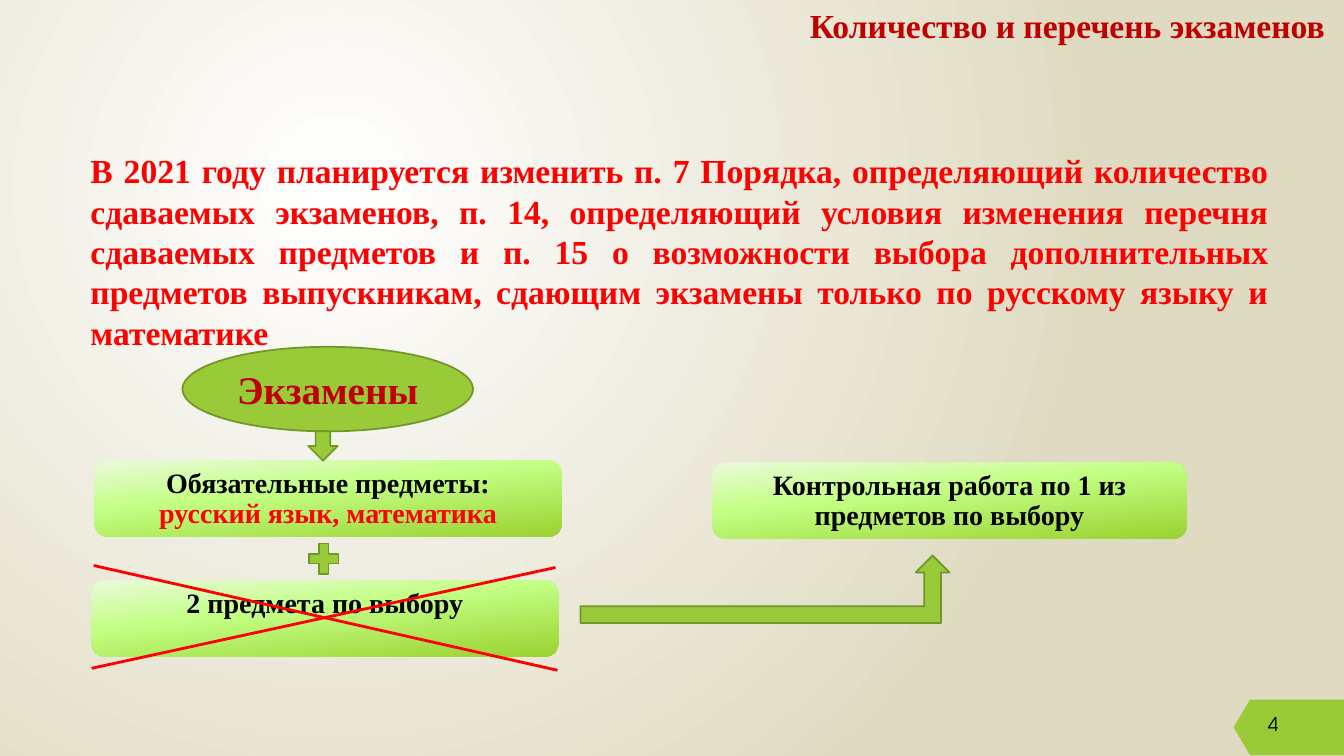
from copy import deepcopy

from lxml import etree
from pptx import Presentation
from pptx.dml.color import RGBColor
from pptx.enum import shapes, text
from pptx.oxml import ns
from pptx.util import Cm, Pt

GREEN = RGBColor(0x99, 0xCB, 0x38)
DARK_GREEN = RGBColor(0x71, 0x96, 0x29)
RED = RGBColor(0xFF, 0, 0)
DARK_RED = RGBColor(0xC0, 0, 0)
BLACK = RGBColor(0, 0, 0)
BACKDROP_STOPS = [(0, RGBColor(0xFF, 0xFF, 0xFF)), (1, RGBColor(0xDF, 0xDB, 0xC2))]
CARD_STOPS = [
    (0, RGBColor(0xEA, 0xFA, 0xDA)),
    (0.4, RGBColor(0xC3, 0xFF, 0x84)),
    (1, RGBColor(0x9B, 0xD2, 0x31)),
]
SERIF = "Times New Roman"
SANS = "TeX Gyre Adventor"
LEFT, CENTER, JUSTIFY = text.PP_ALIGN.LEFT, text.PP_ALIGN.CENTER, text.PP_ALIGN.JUSTIFY
PRESET = shapes.MSO_SHAPE

PAGE_NUMBER = "4"
TITLE = "Количество и перечень экзаменов"
STATEMENT = (
    "В 2021 году планируется изменить п. 7 Порядка, определяющий количество "
    "сдаваемых экзаменов, п. 14, определяющий условия изменения перечня "
    "сдаваемых предметов и п. 15 о возможности выбора дополнительных предметов "
    "выпускникам, сдающим экзамены только по русскому языку и математике"
)
EXAMS = "Экзамены"
CARDS = [
    ((2.39, 11.61, 11.76, 1.91),
     [("Обязательные предметы:", BLACK), ("русский язык, математика", RED)]),
    ((2.31, 14.63, 11.76, 1.91), [("2 предмета по выбору", BLACK)]),
    ((17.96, 11.66, 11.94, 1.91),
     [("Контрольная работа по 1 из предметов по выбору", BLACK)]),
]
SIGNS = [
    (PRESET.DOWN_ARROW, (7.77, 10.87, 0.74, 0.74)),
    (PRESET.MATH_PLUS, (7.65, 13.56, 1.02, 1.04)),
    (PRESET.BENT_UP_ARROW, (14.63, 14, 9.3, 1.7)),
]
CROSS = [(2.36, 14.25, 14.05, 16.89), (2.31, 16.84, 14, 14.3)]
PAGE_TAG = [(31.09, 18.33), (31.5, 17.63), (33.87, 17.63), (33.87, 19.03), (31.5, 19.03)]


def lengths(values):
    return [Cm(value) for value in values]


def set_gradient(fill, stops):
    fill.gradient()
    stop_list = fill.gradient_stops[0]._gs.getparent()
    while len(stop_list) < len(stops):
        stop_list.append(deepcopy(stop_list[0]))
    for stop, (position, color) in zip(fill.gradient_stops, stops):
        stop.position = position
        stop.color.rgb = color
    return stop_list.getparent()


def write(shape, pieces, size, align, font=SERIF, bold=True, spacing=None):
    shape.text_frame.word_wrap = True
    paragraph = shape.text_frame.paragraphs[0]
    paragraph.text = "\v".join(words for words, color in pieces)
    paragraph.alignment = align
    paragraph.line_spacing = spacing
    for run, (words, color) in zip(paragraph.runs, pieces):
        run.font.name = font
        run.font.size = Pt(size)
        run.font.bold = bold
        run.font.color.rgb = color


def add_text(slide, place, words, size, color, align, **style):
    box = slide.shapes.add_textbox(*lengths(place))
    write(box, [(words, color)], size, align, **style)


def add_green(slide, preset, place):
    shape = slide.shapes.add_shape(preset, *lengths(place))
    shape.shadow.inherit = False
    shape.fill.solid()
    shape.fill.fore_color.rgb = GREEN
    shape.line.color.rgb = DARK_GREEN
    shape.line.width = Pt(1.25)
    return shape


def add_card(slide, place, pieces):
    card = slide.shapes.add_shape(PRESET.ROUNDED_RECTANGLE, *lengths(place))
    card.shadow.inherit = False
    card.line.fill.background()
    gradient = set_gradient(card.fill, CARD_STOPS)
    direction = gradient.find(ns.qn("a:lin"))
    direction.set("ang", str(84 * 60000))
    direction.set("scaled", "0")
    card.text_frame.vertical_anchor = text.MSO_ANCHOR.TOP
    write(card, pieces, 20, CENTER, spacing=0.9)


def add_stroke(slide, ends):
    stroke = slide.shapes.add_connector(shapes.MSO_CONNECTOR.STRAIGHT, *lengths(ends))
    stroke.line.color.rgb = RED
    stroke.line.width = Pt(2)
    etree.SubElement(stroke._element.spPr, ns.qn("a:effectLst"))


def paint_background(slide):
    gradient = set_gradient(slide.background.fill, BACKDROP_STOPS)
    gradient.remove(gradient.find(ns.qn("a:lin")))
    circle = etree.SubElement(gradient, ns.qn("a:path"), path="circle")
    etree.SubElement(circle, ns.qn("a:fillToRect"),
                     l="50000", t="50000", r="100000", b="100000")


def add_page_tag(slide):
    start, *corners = [lengths(point) for point in PAGE_TAG]
    builder = slide.shapes.build_freeform(*start)
    builder.add_line_segments(corners, close=True)
    tag = builder.convert_to_shape()
    tag.shadow.inherit = False
    tag.fill.solid()
    tag.fill.fore_color.rgb = GREEN
    tag.line.fill.background()
    add_text(slide, (31.7, 17.83, 2.16, 1.02), PAGE_NUMBER, 13.5, BLACK, LEFT,
             font=SANS, bold=False)


def main():
    presentation = Presentation()
    presentation.slide_width, presentation.slide_height = Cm(33.87), Cm(19.05)
    slide = presentation.slides.add_slide(presentation.slide_layouts[6])
    paint_background(slide)
    add_page_tag(slide)
    add_text(slide, (19.94, 0, 13.92, 1.68), TITLE, 24, DARK_RED, CENTER)
    add_text(slide, (2.03, 3.66, 30.18, 5.38), STATEMENT, 24, RED, JUSTIFY)
    exams = add_green(slide, PRESET.OVAL, (4.6, 8.74, 7.32, 2.13))
    write(exams, [(EXAMS, DARK_RED)], 28, CENTER)
    for place, pieces in CARDS:
        add_card(slide, place, pieces)
    for preset, place in SIGNS:
        add_green(slide, preset, place)
    for ends in CROSS:
        add_stroke(slide, ends)
    presentation.save("out.pptx")


if __name__ == "__main__":
    main()
